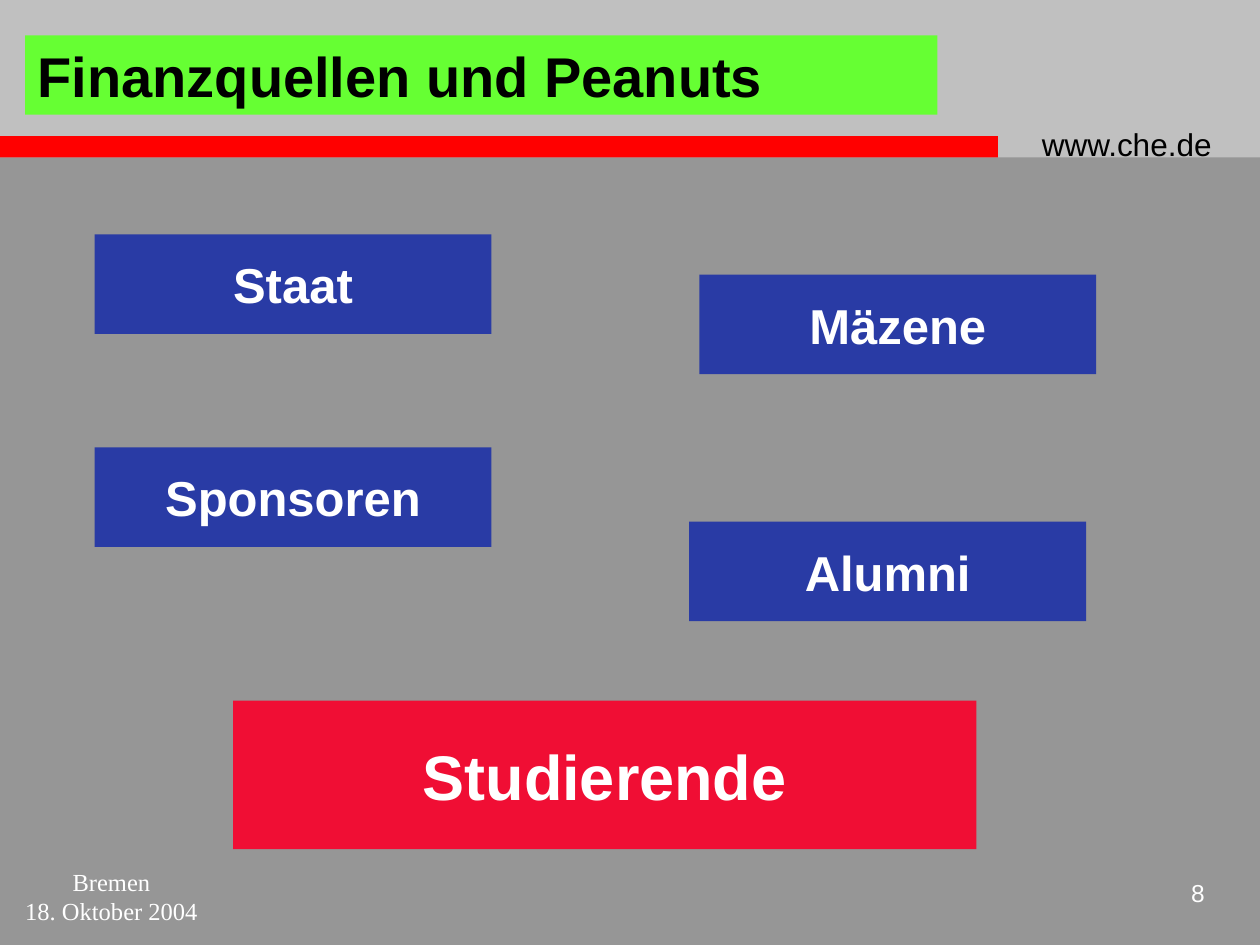
from dataclasses import dataclass
from pptx import Presentation
from pptx.dml.color import RGBColor
from pptx.enum import shapes, text
from pptx.util import Inches, Pt


@dataclass(frozen=True)
class Theme:
    back: str = "969696"
    band: str = "C0C0C0"
    rule: str = "FF0000"
    blue: str = "293BA5"
    red: str = "F00E34"
    green: str = "66FF33"
    black: str = "000000"
    white: str = "FFFFFF"
    sans: str = "Arial"
    serif: str = "Times New Roman"
    head: int = 32
    key: int = 36
    box: int = 28
    link: int = 18
    foot: int = 14


@dataclass(frozen=True)
class Area:
    left: float
    top: float
    width: float
    height: float

    def cut(self) -> list:
        return [Inches(v) for v in (self.left, self.top, self.width, self.height)]


@dataclass(frozen=True)
class Label:
    lines: tuple
    size: int
    color: str
    align: text.PP_ALIGN = text.PP_ALIGN.CENTER
    bold: bool = False
    face: str = Theme.sans


@dataclass(frozen=True)
class Source:
    name: str
    left: float
    top: float


THEME = Theme()
SOURCES = (
    Source("Staat", 0.75, 1.86),
    Source("Mäzene", 5.55, 2.18),
    Source("Sponsoren", 0.75, 3.55),
    Source("Alumni", 5.47, 4.14),
)


def apply(item, values: dict) -> None:
    for name, value in values.items():
        setattr(item, name, value)


def paint(fill, color: str) -> None:
    fill.solid()
    fill.fore_color.rgb = RGBColor.from_string(color)


def write(frame, label: Label, anchor=text.MSO_ANCHOR.MIDDLE, wrap=True) -> None:
    apply(frame, {
        "word_wrap": wrap,
        "auto_size": text.MSO_AUTO_SIZE.NONE,
        "vertical_anchor": anchor,
    })
    for index, line in enumerate(label.lines):
        para = frame.add_paragraph() if index else frame.paragraphs[0]
        para.alignment = label.align
        run = para.add_run()
        run.text = line
        apply(run.font, {"name": label.face, "size": Pt(label.size), "bold": label.bold})
        run.font.color.rgb = RGBColor.from_string(label.color)


def block(slide, area: Area, color: str):
    shape = slide.shapes.add_shape(shapes.MSO_SHAPE.RECTANGLE, *area.cut())
    shape.shadow.inherit = False
    paint(shape.fill, color)
    shape.line.fill.background()
    return shape


def note(slide, area: Area, label: Label) -> None:
    box = slide.shapes.add_textbox(*area.cut())
    write(box.text_frame, label, text.MSO_ANCHOR.TOP)


def head(slide, area: Area, label: Label) -> None:
    title = slide.shapes.title
    apply(title, dict(zip(("left", "top", "width", "height"), area.cut())))
    paint(title.fill, THEME.green)
    write(title.text_frame, label, wrap=False)
    slide.shapes._spTree.append(title._element)


def main() -> None:
    deck = Presentation()
    apply(deck, {"slide_width": Inches(10), "slide_height": Inches(7.5)})
    slide = deck.slides.add_slide(deck.slide_layouts[5])
    paint(slide.background.fill, THEME.back)

    block(slide, Area(0, 0, 10, 1.25), THEME.band)
    block(slide, Area(-0.01, 1.08, 7.93, 0.17), THEME.rule)

    left, right = text.PP_ALIGN.LEFT, text.PP_ALIGN.RIGHT
    note(slide, Area(8.17, 0.94, 1.75, 0.4),
         Label(("www.che.de",), THEME.link, THEME.black, left))
    note(slide, Area(0, 6.83, 1.77, 0.5),
         Label(("Bremen", "18. Oktober 2004"), THEME.foot, THEME.white, face=THEME.serif))
    note(slide, Area(9.08, 6.92, 0.58, 0.42),
         Label(("8",), THEME.foot, THEME.white, right))

    for source in SOURCES:
        shape = block(slide, Area(source.left, source.top, 3.15, 0.79), THEME.blue)
        write(shape.text_frame, Label((source.name,), THEME.box, THEME.white, bold=True))

    key = block(slide, Area(1.85, 5.56, 5.9, 1.18), THEME.red)
    write(key.text_frame, Label(("Studierende",), THEME.key, THEME.white, bold=True))

    head(slide, Area(0.2, 0.28, 7.24, 0.63),
         Label(("Finanzquellen und Peanuts",), THEME.head, THEME.black, left, True))
    deck.save("out.pptx")


if __name__ == "__main__":
    main()
